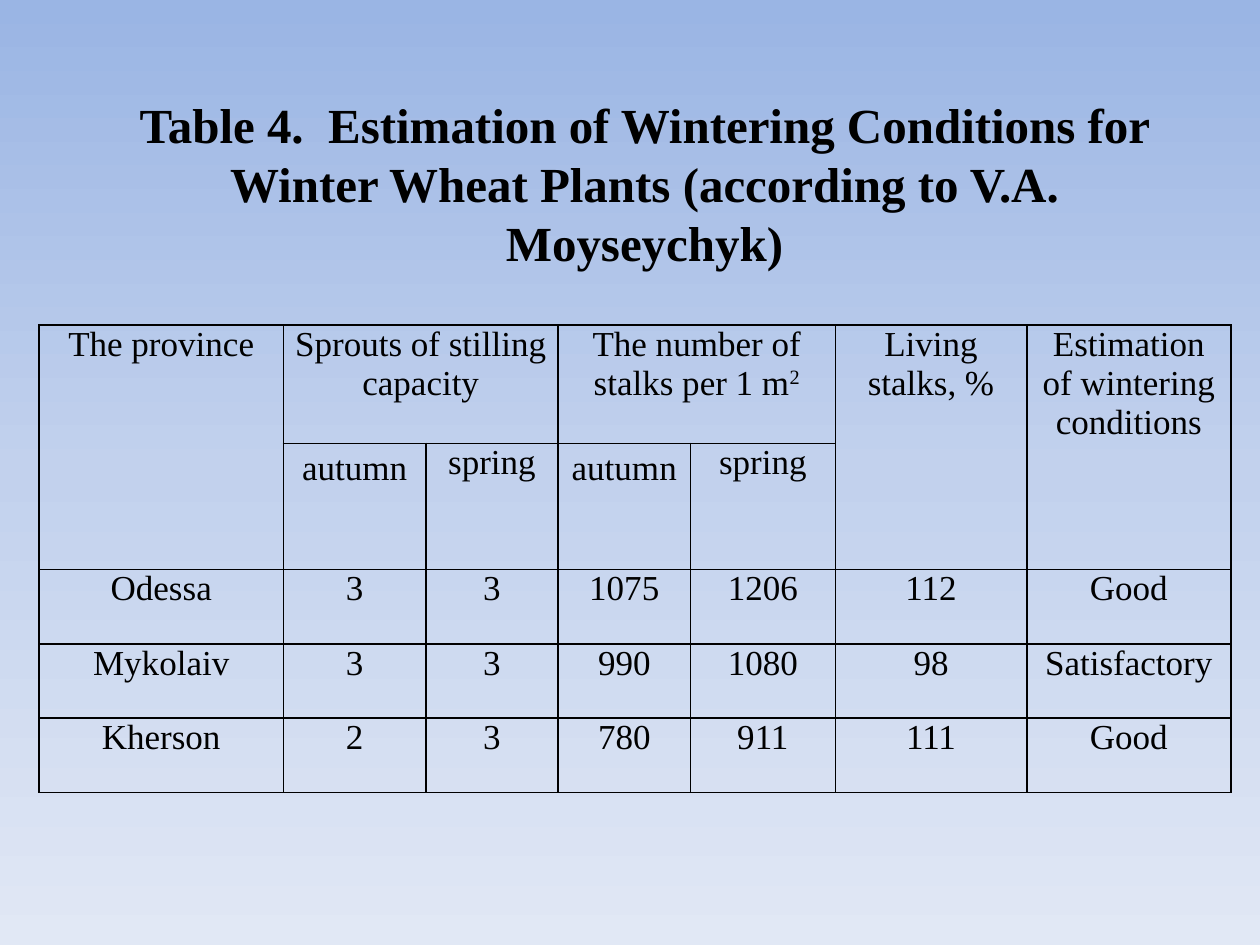
from copy import deepcopy
from dataclasses import dataclass

from lxml import etree
from pptx import Presentation
from pptx.dml.color import RGBColor
from pptx.enum.text import MSO_ANCHOR, MSO_AUTO_SIZE, PP_ALIGN
from pptx.oxml.ns import qn
from pptx.util import Inches, Pt

CENTER = PP_ALIGN.CENTER
TOP = MSO_ANCHOR.TOP
NO_AUTOSIZE = MSO_AUTO_SIZE.NONE
TITLE_ONLY = 5


@dataclass(frozen=True)
class Theme:
    font: str = "Times New Roman"
    ink: str = "000000"
    title_size: int = 28
    table_size: int = 20
    border: int = 1
    sky: tuple = ((0, "9AB5E4"), (0.5, "C2D1ED"), (1, "E1E8F5"))


THEME = Theme()
TITLE = ("Table 4.  Estimation of Wintering Conditions for Winter Wheat Plants "
         "(according to V.А. Moyseychyk)")
TITLE_BOX = (0.7, 0.7, 8.83, 1.51)
TABLE_BOX = (0.31, 2.58, 9.46, 3.71)
COLUMNS = (1.94, 1.13, 1.05, 1.05, 1.15, 1.52, 1.62)
ROWS = (0.94, 1.0, 0.59, 0.59, 0.59)
SUPERSCRIPT = {"The number of stalks per 1 m": "2"}
LOOSE_LINES = {"autumn": 1.15}
MERGES = (((0, 0), (1, 0)), ((0, 1), (0, 2)), ((0, 3), (0, 4)),
          ((0, 5), (1, 5)), ((0, 6), (1, 6)))
CONTENT = (
    ("The province", "Sprouts of stilling capacity", "",
     "The number of stalks per 1 m", "", "Living stalks, %",
     "Estimation of wintering conditions"),
    ("", "autumn", "spring", "autumn", "spring", "", ""),
    ("Odessa", "3", "3", "1075", "1206", "112", "Good"),
    ("Mykolaiv", "3", "3", "990", "1080", "98", "Satisfactory"),
    ("Kherson", "2", "3", "780", "911", "111", "Good"),
)


def apply_format(target, values):
    for name, value in values.items():
        setattr(target, name, value)


def add_span(para, text, size, bold=False):
    span = para.add_run()
    span.text = text
    apply_format(span.font, {"name": THEME.font, "size": Pt(size), "bold": bold})
    span.font.color.rgb = RGBColor.from_string(THEME.ink)
    return span


def paint_background(page):
    fill = page.background.fill
    fill.gradient()
    fill.gradient_angle = 270
    stops = page.element.find(".//" + qn("a:gsLst"))
    stops.append(deepcopy(stops[-1]))
    for stop, (position, color) in zip(fill.gradient_stops, THEME.sky):
        stop.position = position
        stop.color.rgb = RGBColor.from_string(color)


def place_title(page, box):
    title = page.shapes.title
    left, top, width, height = map(Inches, box)
    apply_format(title, {"left": left, "top": top, "width": width, "height": height})
    apply_format(title.text_frame, {
        "word_wrap": True, "auto_size": NO_AUTOSIZE, "vertical_anchor": TOP})
    para = title.text_frame.paragraphs[0]
    para.alignment = CENTER
    add_span(para, TITLE, THEME.title_size, bold=True)


def draw_borders(cell):
    properties = cell._tc.get_or_add_tcPr()
    for index, side in enumerate(("lnL", "lnR", "lnT", "lnB")):
        line = etree.Element(qn("a:" + side), w=str(Pt(THEME.border)))
        solid = etree.SubElement(line, qn("a:solidFill"))
        etree.SubElement(solid, qn("a:srgbClr"), val=THEME.ink)
        properties.insert(index, line)


def fill_cell(cell, text):
    cell.fill.background()
    apply_format(cell, {
        "margin_left": Inches(0.07), "margin_right": Inches(0.07),
        "margin_top": 0, "margin_bottom": 0, "vertical_anchor": TOP})
    draw_borders(cell)
    if not text:
        return
    para = cell.text_frame.paragraphs[0]
    apply_format(para, {"alignment": CENTER, "line_spacing": LOOSE_LINES.get(text)})
    add_span(para, text, THEME.table_size)
    if text in SUPERSCRIPT:
        raised = add_span(para, SUPERSCRIPT[text], THEME.table_size)
        raised.font._element.set("baseline", "30000")


def place_table(page, box):
    table = page.shapes.add_table(len(ROWS), len(COLUMNS), *map(Inches, box)).table
    apply_format(table, {"first_row": False, "horz_banding": False})
    for column, share in zip(table.columns, COLUMNS):
        column.width = Inches(box[2] * share / sum(COLUMNS))
    for row, share in zip(table.rows, ROWS):
        row.height = Inches(box[3] * share / sum(ROWS))
    for row, texts in zip(table.rows, CONTENT):
        for cell, text in zip(row.cells, texts):
            fill_cell(cell, text)
    for first, last in MERGES:
        table.cell(*first).merge(table.cell(*last))


def main():
    deck = Presentation()
    apply_format(deck, {"slide_width": Inches(10), "slide_height": Inches(7.5)})
    page = deck.slides.add_slide(deck.slide_layouts[TITLE_ONLY])
    paint_background(page)
    place_title(page, TITLE_BOX)
    place_table(page, TABLE_BOX)
    deck.save("out.pptx")


if __name__ == "__main__":
    main()
